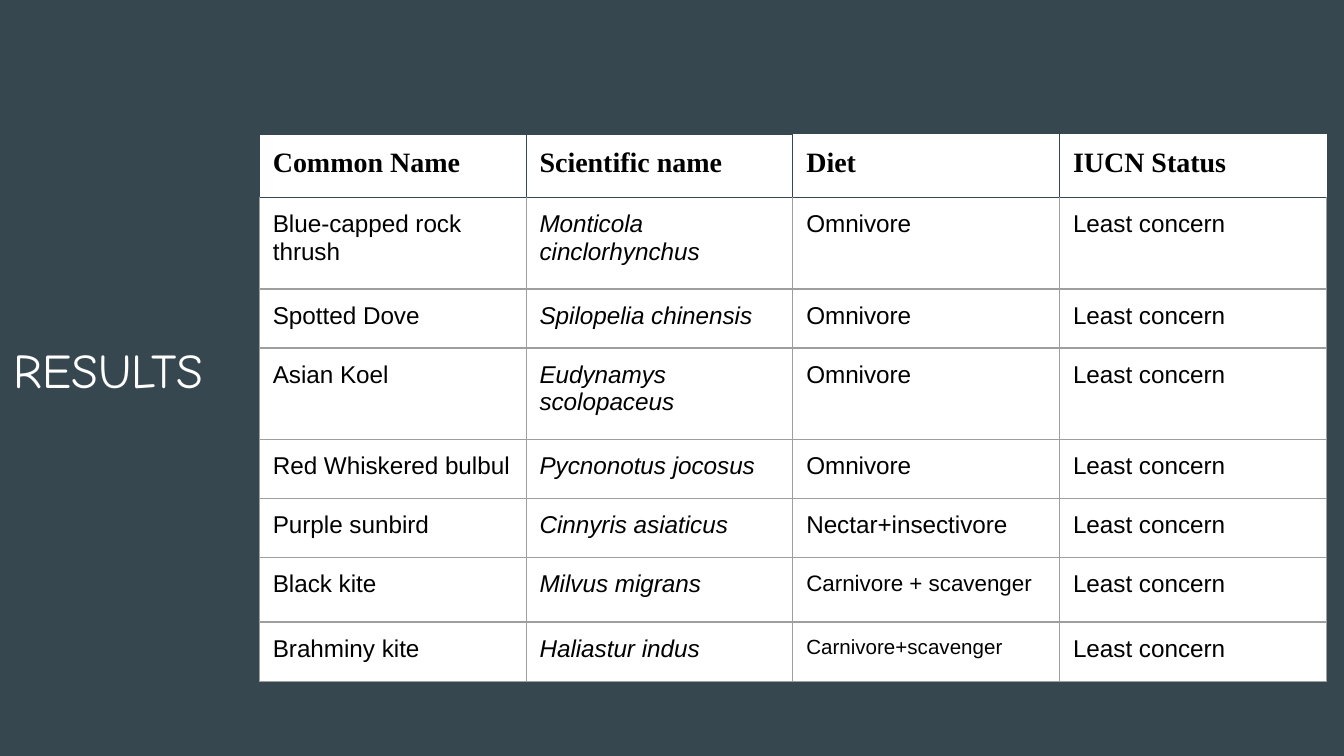
from lxml.etree import SubElement
from pptx import Presentation
from pptx.dml.color import RGBColor
from pptx.enum.text import MSO_ANCHOR
from pptx.oxml.ns import qn
from pptx.util import Inches, Pt

COLORS = {
    "slate": "37474F",
    "white": "FFFFFF",
    "black": "000000",
    "grid": "9E9E9E",
}
SLIDE_WIDTH = 10
SLIDE_HEIGHT = SLIDE_WIDTH * 9 / 16
HEADINGS = ["Common Name", "Scientific name", "Diet", "IUCN Status"]
BIRDS = [
    ("Blue-capped rock thrush", "Monticola cinclorhynchus", "Omnivore"),
    ("Spotted Dove", "Spilopelia chinensis", "Omnivore"),
    ("Asian Koel", "Eudynamys scolopaceus", "Omnivore"),
    ("Red Whiskered bulbul", "Pycnonotus jocosus", "Omnivore"),
    ("Purple sunbird", "Cinnyris asiaticus", "Nectar+insectivore"),
    ("Black kite", "Milvus migrans", "Carnivore + scavenger"),
    ("Brahminy kite", "Haliastur indus", "Carnivore+scavenger"),
]
STATUS = "Least concern"
ROW_HEIGHTS = [0.47, 0.68, 0.44, 0.68, 0.44, 0.44, 0.48, 0.44]
DIET_SIZES = {"Carnivore + scavenger": 12, "Carnivore+scavenger": 11}


def color(name):
    return RGBColor.from_string(COLORS[name])


def format_text(frame, font_name, size, color_name, bold=False, italic=False):
    for run in frame.paragraphs[0].runs:
        font = run.font
        font.name = font_name
        font.size = Pt(size)
        font.bold = bold
        font.italic = italic
        font.color.rgb = color(color_name)


def set_borders(cell, left, right, top, bottom):
    properties = cell._tc.get_or_add_tcPr()
    sides = {"L": left, "R": right, "T": top, "B": bottom}
    for side, color_name in sides.items():
        border = SubElement(properties, qn(f"a:ln{side}"), w=str(Pt(0.75)))
        fill = SubElement(border, qn("a:solidFill"))
        SubElement(fill, qn("a:srgbClr"), val=COLORS[color_name])


def style_cell(cell, row, column):
    cell.margin_left = cell.margin_right = Inches(0.1)
    cell.margin_top = cell.margin_bottom = Inches(0.1)
    cell.vertical_anchor = MSO_ANCHOR.TOP
    if row == 0:
        right = "white" if column == 3 else "slate"
        top = "white" if column >= 2 else "slate"
        set_borders(cell, "slate", right, top, "slate")
        format_text(cell.text_frame, "Times New Roman", 15, "black", bold=True)
    else:
        top = "slate" if row == 1 else "grid"
        set_borders(cell, "grid", "grid", top, "grid")
        size = DIET_SIZES.get(cell.text_frame.text, 13)
        format_text(cell.text_frame, "Arial", size, "black", italic=column == 1)
    cell.fill.solid()
    cell.fill.fore_color.rgb = color("white")


def add_title(slide, left, top, width, height):
    title = slide.shapes.add_textbox(
        Inches(left), Inches(top), Inches(width), Inches(height))
    frame = title.text_frame
    frame.word_wrap = True
    frame.vertical_anchor = MSO_ANCHOR.TOP
    frame.margin_left = frame.margin_right = Inches(0.1)
    frame.margin_top = frame.margin_bottom = Inches(0.1)
    frame.text = "RESULTS"
    format_text(frame, "Comic Neue", 26, "white")


def add_bird_table(slide, left, top, width, height):
    rows = [HEADINGS] + [[*bird, STATUS] for bird in BIRDS]
    table = slide.shapes.add_table(
        len(rows), len(HEADINGS),
        Inches(left), Inches(top), Inches(width), Inches(height)).table
    table.first_row = False
    table.horz_banding = False
    for column in table.columns:
        column.width = Inches(width / len(HEADINGS))
    for row, (texts, row_height) in enumerate(zip(rows, ROW_HEIGHTS)):
        table.rows[row].height = Inches(row_height)
        for column, text in enumerate(texts):
            cell = table.cell(row, column)
            cell.text_frame.text = text
            style_cell(cell, row, column)


def main():
    presentation = Presentation()
    presentation.slide_width = Inches(SLIDE_WIDTH)
    presentation.slide_height = Inches(SLIDE_HEIGHT)
    slide = presentation.slides.add_slide(presentation.slide_layouts[6])
    slide.background.fill.solid()
    slide.background.fill.fore_color.rgb = color("slate")
    add_title(slide, 0, 2.43, 1.93, 0.77)
    add_bird_table(slide, 1.93, 1, 7.94, sum(ROW_HEIGHTS))
    presentation.save("out.pptx")


if __name__ == "__main__":
    main()
